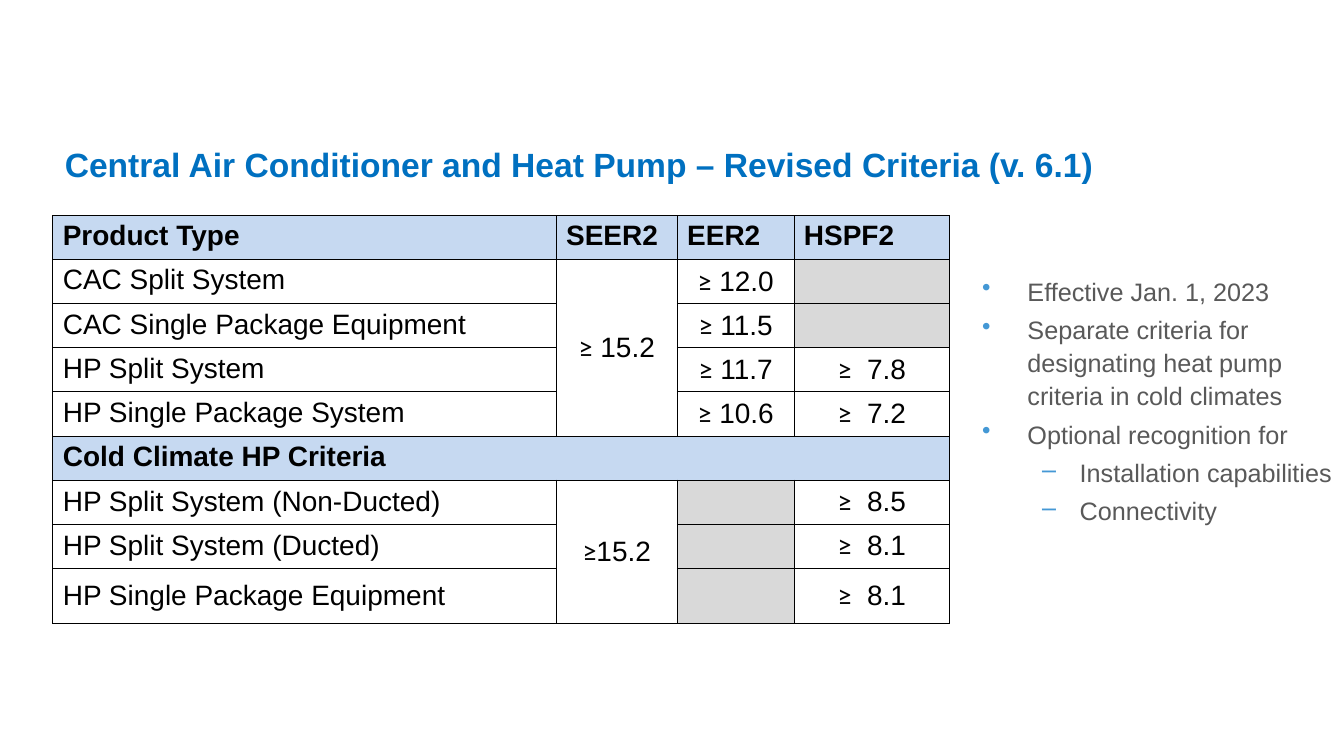
from lxml import etree
from pptx import Presentation
from pptx.dml.color import RGBColor
from pptx.enum.text import MSO_ANCHOR, MSO_AUTO_SIZE, PP_ALIGN
from pptx.oxml.ns import qn
from pptx.util import Cm, Pt

LEFT, CENTER = PP_ALIGN.LEFT, PP_ALIGN.CENTER
TOP, MIDDLE = MSO_ANCHOR.TOP, MSO_ANCHOR.MIDDLE
BAND, GREY, WHITE = "C6D9F1", "D9D9D9", "FFFFFF"


def rgb(value):
    return RGBColor.from_string(value)


def add_run(p, text, size, color, bold=False, font="Arial"):
    r = p.add_run()
    r.text = text
    r.font.name = font
    r.font.size = Pt(size)
    r.font.bold = bold
    r.font.color.rgb = rgb(color)


prs = Presentation()
prs.slide_width, prs.slide_height = Cm(40.64), Cm(22.86)
s = prs.slides.add_slide(prs.slide_layouts[5])

# Title
title = s.shapes.title
title.left, title.top, title.width, title.height = Cm(1.6), Cm(4.06), Cm(39.04), Cm(1.8)
tf = title.text_frame
tf.word_wrap = True
tf.auto_size = MSO_AUTO_SIZE.NONE
tf.vertical_anchor = MIDDLE
tf.margin_left = tf.margin_right = Cm(0.36)
tf.margin_top = tf.margin_bottom = Cm(0.18)
p = tf.paragraphs[0]
p.alignment = LEFT
add_run(p, "Central Air Conditioner and Heat Pump – Revised Criteria (v. 6.1)",
        28.8, "0070C0", bold=True)

# Criteria table: empty text means a cell that does not apply or is merged
rows = [
    ["Product Type", "SEER2", "EER2", "HSPF2"],
    ["CAC Split System", "≥ 15.2", "≥ 12.0", ""],
    ["CAC Single Package Equipment", "", "≥ 11.5", ""],
    ["HP Split System", "", "≥ 11.7", "≥  7.8"],
    ["HP Single Package System", "", "≥ 10.6", "≥  7.2"],
    ["Cold Climate HP Criteria", "", "", ""],
    ["HP Split System (Non-Ducted)", "≥15.2", "", "≥  8.5"],
    ["HP Split System (Ducted)", "", "", "≥  8.1"],
    ["HP Single Package Equipment", "", "", "≥  8.1"],
]
BAND_ROWS = (0, 5)
COLD_START, LAST = 6, len(rows) - 1
widths = [15.22, 3.66, 3.53, 4.7]
heights = [1.33] * LAST + [1.66]

table = s.shapes.add_table(len(rows), len(widths), Cm(1.6), Cm(6.52),
                           Cm(sum(widths)), Cm(sum(heights))).table
for column, width in zip(table.columns, widths):
    column.width = Cm(width)
for row, height in zip(table.rows, heights):
    row.height = Cm(height)

for i, row in enumerate(rows):
    for j, text in enumerate(row):
        cell = table.cell(i, j)
        cell.margin_left = cell.margin_right = Cm(0.3)
        cell.margin_top = cell.margin_bottom = Cm(0.15)
        tcPr = cell._tc.get_or_add_tcPr()
        for side in ("lnL", "lnR", "lnT", "lnB"):
            ln = etree.SubElement(tcPr, qn(f"a:{side}"), w=str(Pt(1)))
            line_fill = etree.SubElement(ln, qn("a:solidFill"))
            etree.SubElement(line_fill, qn("a:srgbClr"), val="000000")

        band = i in BAND_ROWS
        blank = not text and j > 1
        cell.fill.solid()
        cell.fill.fore_color.rgb = rgb(BAND if band else GREY if blank else WHITE)
        centred = j == 1 and not band or j == 0 and i >= COLD_START or j == 3 and i == LAST
        cell.vertical_anchor = MIDDLE if centred else TOP

        p = cell.text_frame.paragraphs[0]
        if text.startswith("≥"):
            p.alignment = CENTER
            add_run(p, "≥", 24, "000000", font="Calibri")
            add_run(p, text[1:], 24, "000000")
        elif text:
            add_run(p, text, 24, "000000", bold=band)

for first, last in [((1, 1), (4, 1)), ((5, 0), (5, 3)), ((COLD_START, 1), (LAST, 1))]:
    table.cell(*first).merge(table.cell(*last))

# Notes beside the table
notes = [
    (0, "Effective Jan. 1, 2023"),
    (0, "Separate criteria for designating heat pump criteria in cold climates"),
    (0, "Optional recognition for"),
    (1, "Installation capabilities"),
    (1, "Connectivity"),
]
bullets = [("•", 1.37, -1.37), ("–", 2.95, -1.14)]

tf = s.shapes.add_textbox(Cm(29.4), Cm(8.1), Cm(11.24), Cm(9.1)).text_frame
tf.word_wrap = True
tf.margin_left = tf.margin_right = Cm(0.3)
tf.margin_top = tf.margin_bottom = Cm(0.15)
for i, (level, text) in enumerate(notes):
    p = tf.add_paragraph() if i else tf.paragraphs[0]
    char, margin, indent = bullets[level]
    pPr = p._p.get_or_add_pPr()
    pPr.set("marL", str(Cm(margin)))
    pPr.set("indent", str(Cm(indent)))
    bullet_color = etree.SubElement(pPr, qn("a:buClr"))
    etree.SubElement(bullet_color, qn("a:srgbClr"), val="4498D5")
    etree.SubElement(pPr, qn("a:buChar"), char=char)
    p.level = level
    p.line_spacing = 1.1
    if i:
        p.space_before = Pt(4.3)
    add_run(p, text, 21.6, "595959")

prs.save("out.pptx")
